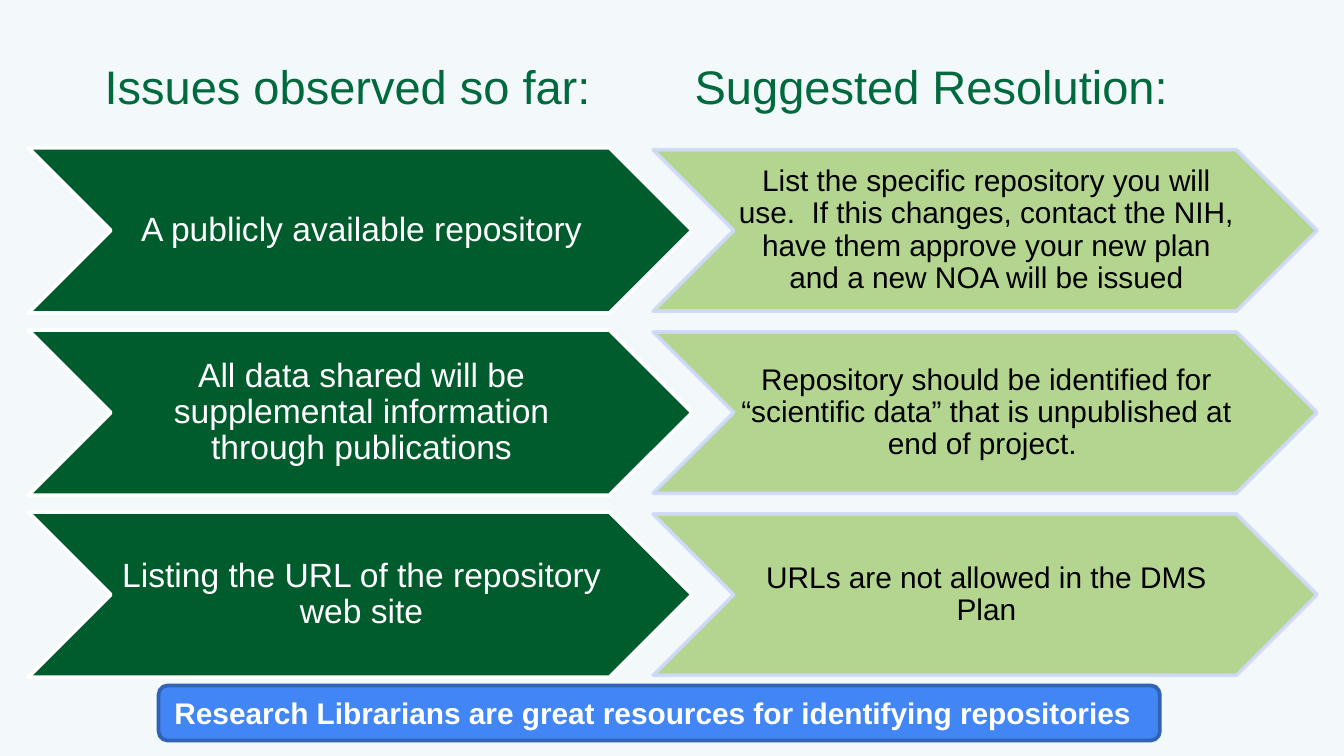
from lxml import etree
from pptx import Presentation
from pptx.dml.color import RGBColor
from pptx.enum.shapes import MSO_SHAPE
from pptx.enum.text import MSO_ANCHOR, PP_ALIGN
from pptx.oxml.ns import qn
from pptx.util import Inches, Pt

CHEVRON = MSO_SHAPE.CHEVRON
ROUNDED = MSO_SHAPE.FLOWCHART_ALTERNATE_PROCESS
MIDDLE = MSO_ANCHOR.MIDDLE
BOTTOM = MSO_ANCHOR.BOTTOM
LEFT = PP_ALIGN.LEFT
CENTER = PP_ALIGN.CENTER

FIRST_ROW = 1.1
LAST_ROW = 3.81
ISSUE_HEIGHT = 1.23
RESOLUTION_HEIGHT = 1.2
ROWS = [
    ("A publicly available repository",
     "List the specific repository you will use.  If this changes, contact the NIH, "
     "have them approve your new plan and a new NOA will be issued"),
    ("All data shared will be supplemental information through publications",
     "Repository should be identified for “scientific data” that is unpublished at "
     "end of project. "),
    ("Listing the URL of the repository web site",
     "URLs are not allowed in the DMS Plan"),
]


def rgb(color):
    """Turn a hex string into a colour."""
    return RGBColor.from_string(color)


def set_alpha(fill_parent, percent):
    """Make the solid fill directly under an element partly transparent."""
    color = fill_parent.find(qn("a:solidFill"))[0]
    etree.SubElement(color, qn("a:alpha")).set("val", str(percent * 1000))


def write(shape, text, size, color, align=CENTER, anchor=MIDDLE, bold=False,
          insets=(0.1, 0.1, 0.1, 0.1), spacing=None, tab=None):
    """Put one formatted paragraph into a shape."""
    tf = shape.text_frame
    tf.word_wrap = True
    tf.vertical_anchor = anchor
    tf.margin_left, tf.margin_top, tf.margin_right, tf.margin_bottom = map(Inches, insets)
    tf.text = text
    p = tf.paragraphs[0]
    p.alignment = align
    if spacing:
        p.line_spacing = spacing
    if tab:
        tabs = etree.SubElement(p._p.get_or_add_pPr(), qn("a:tabLst"))
        etree.SubElement(tabs, qn("a:tab"), pos=str(Inches(tab)), algn="l")
    for r in p.runs:
        r.font.name = "Arial"
        r.font.size = Pt(size)
        r.font.bold = bold
        r.font.color.rgb = rgb(color)


def add_text(slide, box, text, size, color, **style):
    """Add a text box."""
    write(slide.shapes.add_textbox(*map(Inches, box)), text, size, color, **style)


def add_panel(slide, kind, box, fill, line, opacity=100):
    """Add a filled, outlined preset shape."""
    s = slide.shapes.add_shape(kind, *map(Inches, box))
    s.shadow.inherit = False
    s.fill.solid()
    s.fill.fore_color.rgb = rgb(fill)
    s.line.color.rgb = rgb(line)
    s.line.width = Pt(2)
    if opacity < 100:
        set_alpha(s._element.spPr, opacity)
        set_alpha(s._element.spPr.find(qn("a:ln")), opacity)
    return s


def add_row(slide, top, issue, resolution):
    """Add an issue chevron and the resolution chevron centred beside it."""
    add_panel(slide, CHEVRON, (0.21, top, 4.94, ISSUE_HEIGHT), "005C2D", "FFFFFF")
    add_text(slide, (0.82, top, 3.71, ISSUE_HEIGHT), issue, 18, "FFFFFF",
             insets=(0.03, 0.01, 0, 0.01), spacing=0.9)
    top += (ISSUE_HEIGHT - RESOLUTION_HEIGHT) / 2
    add_panel(slide, CHEVRON, (4.86, top, 4.94, RESOLUTION_HEIGHT), "AED284", "CFD9FB", 90)
    add_text(slide, (5.46, top, 3.74, RESOLUTION_HEIGHT), resolution, 16, "000000",
             insets=(0.02, 0.01, 0, 0.01), spacing=0.9)


def main():
    """Build the slide and save it."""
    prs = Presentation()
    prs.slide_width = Inches(10)
    prs.slide_height = prs.slide_width * 9 // 16
    slide = prs.slides.add_slide(prs.slide_layouts[6])
    slide.background.fill.solid()
    slide.background.fill.fore_color.rgb = rgb("F3F9FA")
    add_text(slide, (0.68, 0.32, 9.32, 0.63),
             "Issues observed so far:\tSuggested Resolution:", 25.2, "00693E",
             align=LEFT, anchor=BOTTOM, tab=4.39)
    pitch = (LAST_ROW - FIRST_ROW) / (len(ROWS) - 1)
    for i, (issue, resolution) in enumerate(ROWS):
        add_row(slide, FIRST_ROW + i * pitch, issue, resolution)
    banner = add_panel(slide, ROUNDED, (1.18, 5.1, 7.45, 0.41), "4285F4", "3162B5")
    write(banner, "Research Librarians are great resources for identifying repositories",
          16, "FFFFFF", align=LEFT, bold=True, insets=(0.1, 0.05, 0.1, 0.05))
    prs.save("out.pptx")


if __name__ == "__main__":
    main()
